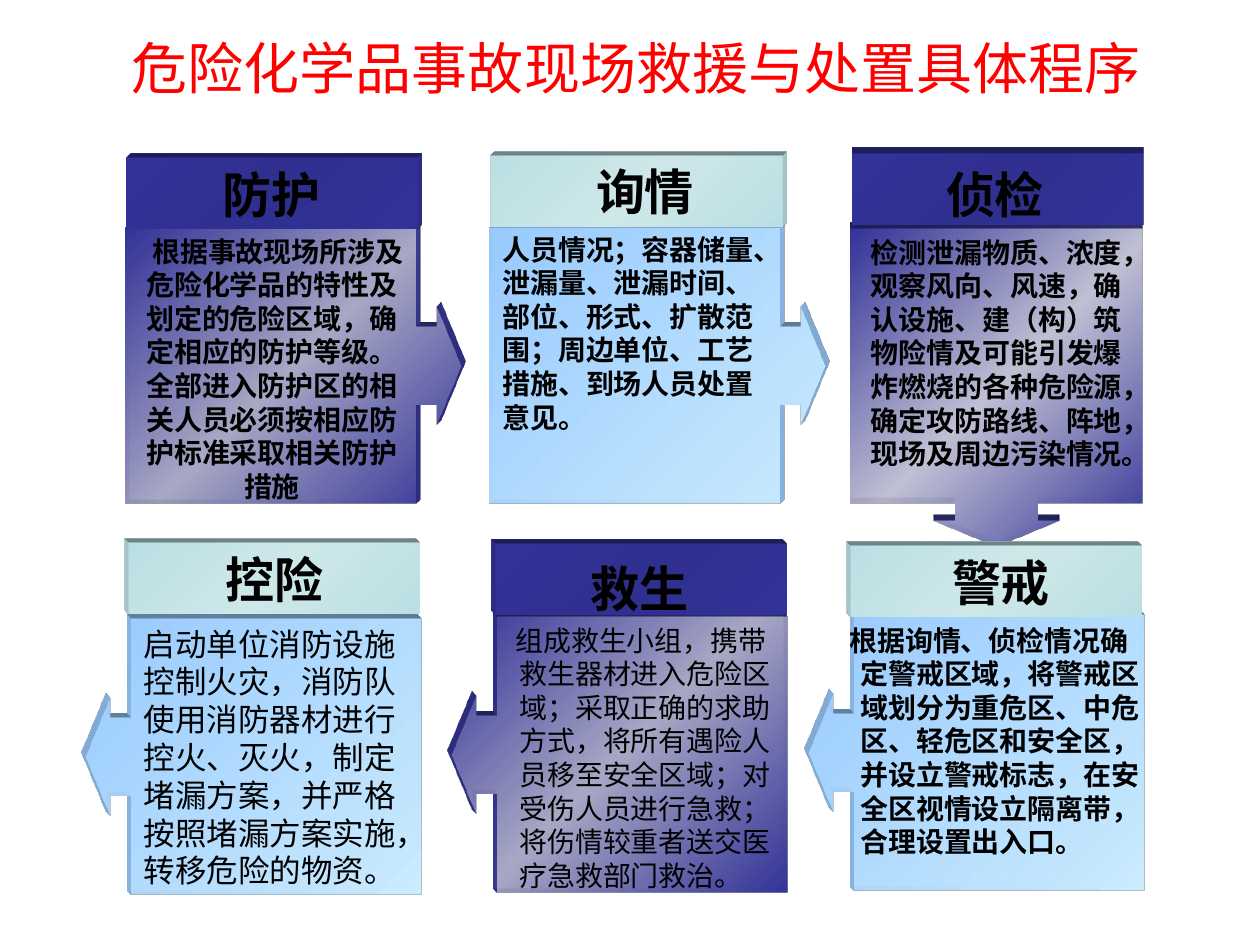
from dataclasses import dataclass
from typing import Optional

from lxml.etree import SubElement
from pptx import Presentation
from pptx.dml.color import RGBColor
from pptx.enum.shapes import MSO_SHAPE as Preset
from pptx.enum.text import MSO_ANCHOR as Anchor, MSO_AUTO_SIZE as AutoSize, PP_ALIGN as Align
from pptx.oxml import parse_xml
from pptx.oxml.ns import qn
from pptx.util import Emu, Pt

EMU_PER_PX = 914400 / 126
FONT = "Arial"
COLORS = {
    "title": "FF0000", "text": "000000", "navy": "333399", "navy_mid": "303091",
    "lilac": "A8A8C6", "pale_lilac": "C1C1D5", "blue": "99CCFF", "pale_blue": "CCECFF",
    "teal": "BBE0E3", "pale_teal": "CEE8EA",
}
GRADIENTS = {
    "navy_panel": [(0, "navy", 100), (50, "lilac", 90), (100, "navy", 100)],
    "lilac_panel": [(0, "navy", 100), (50, "pale_lilac", 90), (100, "navy", 100)],
    "blue_panel": [(0, "blue", 90), (100, "pale_blue", 100)],
    "navy_header": [(0, "navy", 100), (50, "navy_mid", 100), (100, "navy", 100)],
    "teal_header": [(0, "teal", 100), (50, "pale_teal", 100), (100, "teal", 100)],
}
CALLOUT = (0.284, 0.215, 0.089, 0.865)
CALLOUT_SIZE = (336, 276)
HEADER_SIZE = (291, 71)


@dataclass
class Label:
    text: str
    area: Optional[tuple] = None
    size: int = 16
    bold: bool = True
    align: Align = Align.CENTER
    margin: int = 0
    indent: int = 0


@dataclass
class Step:
    callout: tuple
    header: tuple
    panel_fill: str
    header_fill: str
    camera: str
    heading: Label
    body: Label
    flip: bool = False
    rotation: int = 0


STEPS = [
    Step((125, 228), (126, 158), "navy_panel", "navy_header", "TopRight",
         Label("防护", size=28),
         Label("根据事故现场所涉及危险化学品的特性及划定的危险区域，确定相应的防护等级。"
               "全部进入防护区的相关人员必须按相应防护标准采取相关防护措施",
               (122, 228, 300, 284), indent=12)),
    Step((489, 228), (491, 156), "blue_panel", "teal_header", "TopRight",
         Label("询情", (536, 155, 218, 72), 28),
         Label("人员情况；容器储量、泄漏量、泄漏时间、部位、形式、扩散范围；"
               "周边单位、工艺措施、到场人员处置意见。",
               (490, 226, 290, 217), align=Align.LEFT)),
    Step((838, 242, 318, 292), (853, 154), "lilac_panel", "navy_header", "Top",
         Label("侦检", (864, 158, 262, 72), 28),
         Label("检测泄漏物质、浓度，观察风向、风速，确认设施、建（构）筑物险情及可能引发"
               "爆炸燃烧的各种危险源，确定攻防路线、阵地，现场及周边污染情况。",
               (856, 229, 281, 249)), rotation=90),
    Step((452, 617), (496, 544), "navy_panel", "navy_header", "TopLeft",
         Label("救生", (496, 552, 287, 72), 28),
         Label("组成救生小组，携带救生器材进入危险区域；采取正确的求助方式，将所有遇险人员"
               "移至安全区域；对受伤人员进行急救；将伤情较重者送交医疗急救部门救治。",
               (491, 617, 315, 284), bold=False, align=Align.LEFT, margin=16, indent=-4),
         flip=True),
    Step((809, 615), (851, 546), "blue_panel", "teal_header", "TopLeft",
         Label("警戒", (856, 546, 290, 72), 28),
         Label("根据询情、侦检情况确定警戒区域，将警戒区域划分为重危区、中危区、轻危区和"
               "安全区，并设立警戒标志，在安全区视情设立隔离带，合理设置出入口。",
               (832, 617, 329, 284), align=Align.LEFT, margin=16, indent=-11),
         flip=True),
    Step((86, 619), (129, 543), "blue_panel", "teal_header", "TopLeft",
         Label("控险", size=28),
         Label("启动单位消防设施\n控制火灾，消防队\n使用消防器材进行\n控火、灭火，制定\n"
               "堵漏方案，并严格\n按照堵漏方案实施，\n转移危险的物资。",
               size=18, bold=False, align=Align.LEFT),
         flip=True),
]


def px(length: int) -> Emu:
    return Emu(round(length * EMU_PER_PX))


def paint(shape, gradient: str) -> None:
    shape.fill.gradient()
    shape.fill.gradient_angle = 0
    fill = shape.element.spPr.find(qn("a:gradFill"))
    stops = fill.find(qn("a:gsLst"))
    for stop in list(stops):
        stops.remove(stop)
    for position, color, opacity in GRADIENTS[gradient]:
        stop = SubElement(stops, qn("a:gs"), pos=str(position * 1000))
        tone = SubElement(stop, qn("a:srgbClr"), val=COLORS[color])
        if opacity < 100:
            SubElement(tone, qn("a:alpha"), val=str(opacity * 1000))
    fill.find(qn("a:lin")).set("ang", "2700000")


def extrude(shape, camera: str, color: str) -> None:
    namespace = 'xmlns:a="http://schemas.openxmlformats.org/drawingml/2006/main"'
    properties = shape.element.spPr
    properties.append(parse_xml(
        f'<a:scene3d {namespace}><a:camera prst="legacyOblique{camera}"/>'
        '<a:lightRig rig="legacyFlat3" dir="b"/></a:scene3d>'))
    properties.append(parse_xml(
        f'<a:sp3d {namespace} extrusionH="90000" prstMaterial="legacyMatte">'
        f'<a:extrusionClr><a:srgbClr val="{color}"/></a:extrusionClr></a:sp3d>'))


def add_block(page, preset, area: tuple, gradient: str, camera: str):
    block = page.shapes.add_shape(preset, *map(px, area))
    block.shadow.inherit = False
    block.line.fill.background()
    paint(block, gradient)
    extrude(block, camera, COLORS[GRADIENTS[gradient][0][1]])
    return block


def write(frame, label: Label, color: str = "text") -> None:
    frame.text = label.text
    for para in frame.paragraphs:
        para.alignment = label.align
        if label.margin or label.indent:
            properties = para._p.get_or_add_pPr()
            properties.set("marL", str(px(label.margin)))
            properties.set("indent", str(px(label.indent)))
        para.font.name = FONT
        para.font.size = Pt(label.size)
        para.font.bold = label.bold
        para.font.color.rgb = RGBColor.from_string(COLORS[color])


def add_label(page, shape, label: Label) -> None:
    if label.area:
        frame = page.shapes.add_textbox(*map(px, label.area)).text_frame
        frame.word_wrap = True
        frame.auto_size = AutoSize.SHAPE_TO_FIT_TEXT
    else:
        frame = shape.text_frame
        frame.word_wrap = False
        frame.vertical_anchor = Anchor.MIDDLE
    write(frame, label)


def add_step(page, step: Step) -> None:
    area = step.callout if len(step.callout) == 4 else step.callout + CALLOUT_SIZE
    panel = add_block(page, Preset.RIGHT_ARROW_CALLOUT, area, step.panel_fill, step.camera)
    for index, value in enumerate(CALLOUT):
        panel.adjustments[index] = value
    panel.rotation = step.rotation
    if step.flip:
        panel.element.spPr.xfrm.set("flipH", "1")
    header = add_block(page, Preset.RECTANGLE, step.header + HEADER_SIZE,
                       step.header_fill, step.camera)
    add_label(page, header, step.heading)
    add_label(page, panel, step.body)


def add_title(page, label: Label) -> None:
    title = page.shapes.title
    title.left, title.top, title.width, title.height = map(px, label.area)
    title.text_frame.vertical_anchor = Anchor.MIDDLE
    write(title.text_frame, label, "title")


def main() -> None:
    deck = Presentation()
    deck.slide_width, deck.slide_height = px(1260), px(945)
    page = deck.slides.add_slide(deck.slide_layouts[5])
    add_title(page, Label("危险化学品事故现场救援与处置具体程序", (58, 19, 1157, 97), 32, False))
    for step in STEPS:
        add_step(page, step)
    deck.save("out.pptx")


if __name__ == "__main__":
    main()
